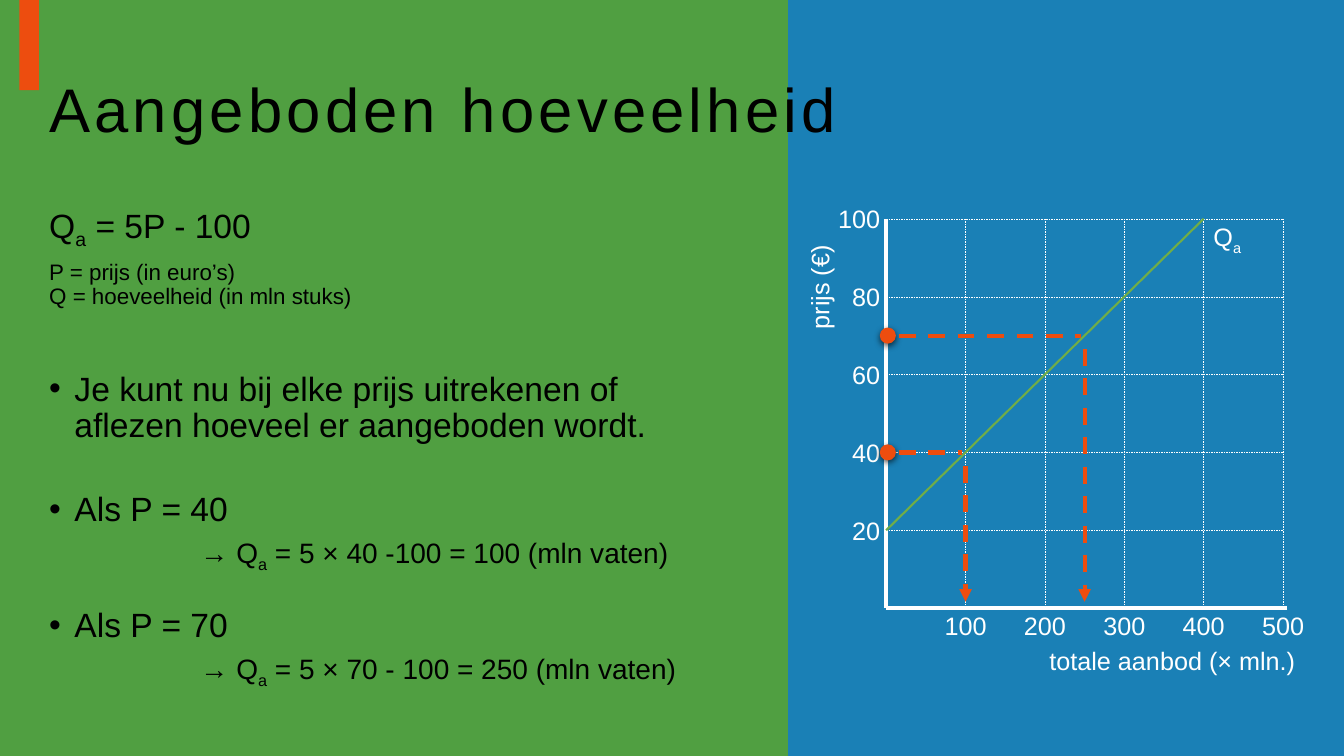
from lxml.etree import SubElement
from pptx import Presentation
from pptx.dml.color import RGBColor
from pptx.enum.dml import MSO_LINE_DASH_STYLE as Dash
from pptx.enum.shapes import MSO_CONNECTOR as Connector, MSO_SHAPE as Shape
from pptx.enum.text import MSO_ANCHOR as Anchor, PP_ALIGN as Align
from pptx.oxml.ns import qn
from pptx.util import Inches, Pt

CELL = 1 / 12
COLUMNS, ROWS = 160, 90
BLACK, WHITE, ORANGE = "000000", "FFFFFF", "ED4D0F"
GREEN, BLUE, SUPPLY = "258812", "1A80B6", "70AD47"

SPLIT = 93.84
MARGIN = 4.68
AXIS_LEFT, AXIS_TOP = 105.5, 26.05
STEP_X, STEP_Y = 9.45, 9.27
AXIS_RIGHT, AXIS_BOTTOM = AXIS_LEFT + 5 * STEP_X, AXIS_TOP + 5 * STEP_Y
LABEL_HEIGHT = 4.8


def color(hex_text):
    return RGBColor.from_string(hex_text)


def cells(count):
    return Inches(count * CELL)


def column_of(quantity):
    return AXIS_LEFT + quantity / 100 * STEP_X


def row_of(price):
    return AXIS_BOTTOM - price / 20 * STEP_Y


class SlideBuilder:
    font = "Arial"

    def __init__(self, page):
        self.page = page

    def shape(self, kind, left, top, width, height, fill, alpha=None):
        item = self.page.shapes.add_shape(kind, *map(cells, (left, top, width, height)))
        item.shadow.inherit = False
        item.fill.solid()
        item.fill.fore_color.rgb = color(fill)
        item.line.fill.background()
        if alpha:
            tint = item._element.spPr.find(".//" + qn("a:srgbClr"))
            SubElement(tint, qn("a:alpha"), val=str(alpha * 1000))
        return item

    def dot(self, column, row, size=1.92):
        item = self.shape(Shape.OVAL, column - size / 2, row - size / 2, size, size, ORANGE)
        effects = item._element.spPr.find(qn("a:effectLst"))
        shadow = SubElement(effects, qn("a:outerShdw"), blurRad=str(Pt(4.5)),
                            dist=str(Pt(1.5)), dir="5400000", rotWithShape="0")
        tint = SubElement(shadow, qn("a:srgbClr"), val=BLACK)
        SubElement(tint, qn("a:alpha"), val="63000")

    def line(self, start, end, ink, width, dashed=False, arrow=False):
        item = self.page.shapes.add_connector(
            Connector.STRAIGHT, *map(cells, (*start, *end)))
        item.line.color.rgb = color(ink)
        item.line.width = Pt(width)
        if dashed:
            item.line.dash_style = Dash.DASH
        if arrow:
            outline = item._element.spPr.find(qn("a:ln"))
            SubElement(outline, qn("a:tailEnd"), type="triangle")
        SubElement(item._element.spPr, qn("a:effectLst"))

    def box(self, left, top, width, height, anchor=Anchor.TOP):
        box = self.page.shapes.add_textbox(*map(cells, (left, top, width, height)))
        box.text_frame.word_wrap = True
        box.text_frame.vertical_anchor = anchor
        return box

    def fill_para(self, para, parts, size, ink):
        para.text = parts[0]
        for index, part in enumerate(parts[1:], 1):
            span = para.add_run()
            span.text = part
            if index % 2:
                span._r.get_or_add_rPr().set("baseline", "-25000")
        for span in para.runs:
            span.font.name = self.font
            span.font.size = Pt(size)
            span.font.color.rgb = color(ink)

    def label(self, left, top, width, *parts, align=Align.CENTER):
        box = self.box(left, top, width, LABEL_HEIGHT)
        para = box.text_frame.paragraphs[0]
        self.fill_para(para, parts, 18, WHITE)
        para.alignment = align
        return box

    def title(self, text):
        box = self.box(MARGIN, MARGIN, 151.32, 17.4, Anchor.MIDDLE)
        para = box.text_frame.paragraphs[0]
        self.fill_para(para, [text], 44, BLACK)
        para.line_spacing = 0.9
        para.runs[0]._r.get_or_add_rPr().set("spc", "300")

    def body(self, entries):
        frame = self.box(MARGIN, 23.88, 83.88, 61.44).text_frame
        for index, (parts, size, before, indent, bullet) in enumerate(entries):
            para = frame.paragraphs[0] if index == 0 else frame.add_paragraph()
            self.fill_para(para, parts, size, BLACK)
            para.line_spacing = 0.9
            para.space_before = Pt(before)
            props = para._p.get_or_add_pPr()
            props.set("marL", str(Inches(indent)))
            if bullet:
                props.set("indent", str(-Inches(indent)))
                SubElement(props, qn("a:buFont"), typeface=self.font)
                SubElement(props, qn("a:buChar"), char="•")


def draw_panels(builder):
    builder.shape(Shape.RECTANGLE, 0, 0, SPLIT, ROWS, GREEN, alpha=80)
    builder.shape(Shape.RECTANGLE, SPLIT, 0, COLUMNS - SPLIT, ROWS, BLUE)
    builder.shape(Shape.RECTANGLE, 2.32, 0, 2.32, 10.75, ORANGE)


def draw_text(builder):
    builder.title("Aangeboden hoeveelheid")
    builder.body([
        (("Q", "a", " = 5P - 100"), 24, 10, 0, False),
        (("P = prijs (in euro’s)\vQ = hoeveelheid (in mln stuks)",), 16, 10, 0, False),
        (("Je kunt nu bij elke prijs uitrekenen of aflezen hoeveel er "
          "aangeboden wordt.",), 24, 45, 0.25, True),
        (("Als P = 40",), 24, 34, 0.25, True),
        (("→ Q", "a", " = 5 × 40 -100 = 100 (mln vaten)"), 20, 5, 1.5, False),
        (("Als P = 70",), 24, 27.5, 0.25, True),
        (("→ Q", "a", " = 5 × 70 - 100 = 250 (mln vaten)"), 20, 5, 1.5, False),
    ])


def draw_graph(builder):
    builder.line((AXIS_LEFT, AXIS_TOP), (AXIS_LEFT, AXIS_BOTTOM), WHITE, 3)
    for price in range(20, 101, 20):
        row = row_of(price)
        builder.line((AXIS_LEFT, row), (AXIS_RIGHT, row), WHITE, 0.25, dashed=True)
        builder.label(AXIS_LEFT - 8.54, row - LABEL_HEIGHT / 2, 9, str(price),
                      align=Align.RIGHT)
    for quantity in range(100, 501, 100):
        column = column_of(quantity)
        builder.line((column, AXIS_TOP), (column, AXIS_BOTTOM), WHITE, 0.25, dashed=True)
        builder.label(column - STEP_X / 2, 72.12, STEP_X, str(quantity))
    builder.line((AXIS_RIGHT + 0.5, AXIS_BOTTOM), (AXIS_LEFT, AXIS_BOTTOM), WHITE, 3)
    builder.label(122.56, 76.2, 34, "totale aanbod (× mln.)")
    builder.label(90.56, 31.8, 14, "prijs (€)").rotation = 270

    builder.line((column_of(400), row_of(100)), (column_of(0), row_of(20)), SUPPLY, 1.5)
    builder.label(143.28, 25.8, 6, "Q", "a", align=Align.LEFT)
    for price in (40, 70):
        column, row = column_of(5 * price - 100), row_of(price)
        builder.dot(AXIS_LEFT + 0.2, row)
        builder.line((column, row + 1.6), (column, 71.64), ORANGE, 3, True, True)
        builder.line((AXIS_LEFT + 1.5, row), (column - 0.4, row), ORANGE, 3, True)


def main():
    deck = Presentation()
    deck.slide_width, deck.slide_height = cells(COLUMNS), cells(ROWS)
    builder = SlideBuilder(deck.slides.add_slide(deck.slide_layouts[6]))
    draw_panels(builder)
    draw_text(builder)
    draw_graph(builder)
    deck.save("out.pptx")


if __name__ == "__main__":
    main()
